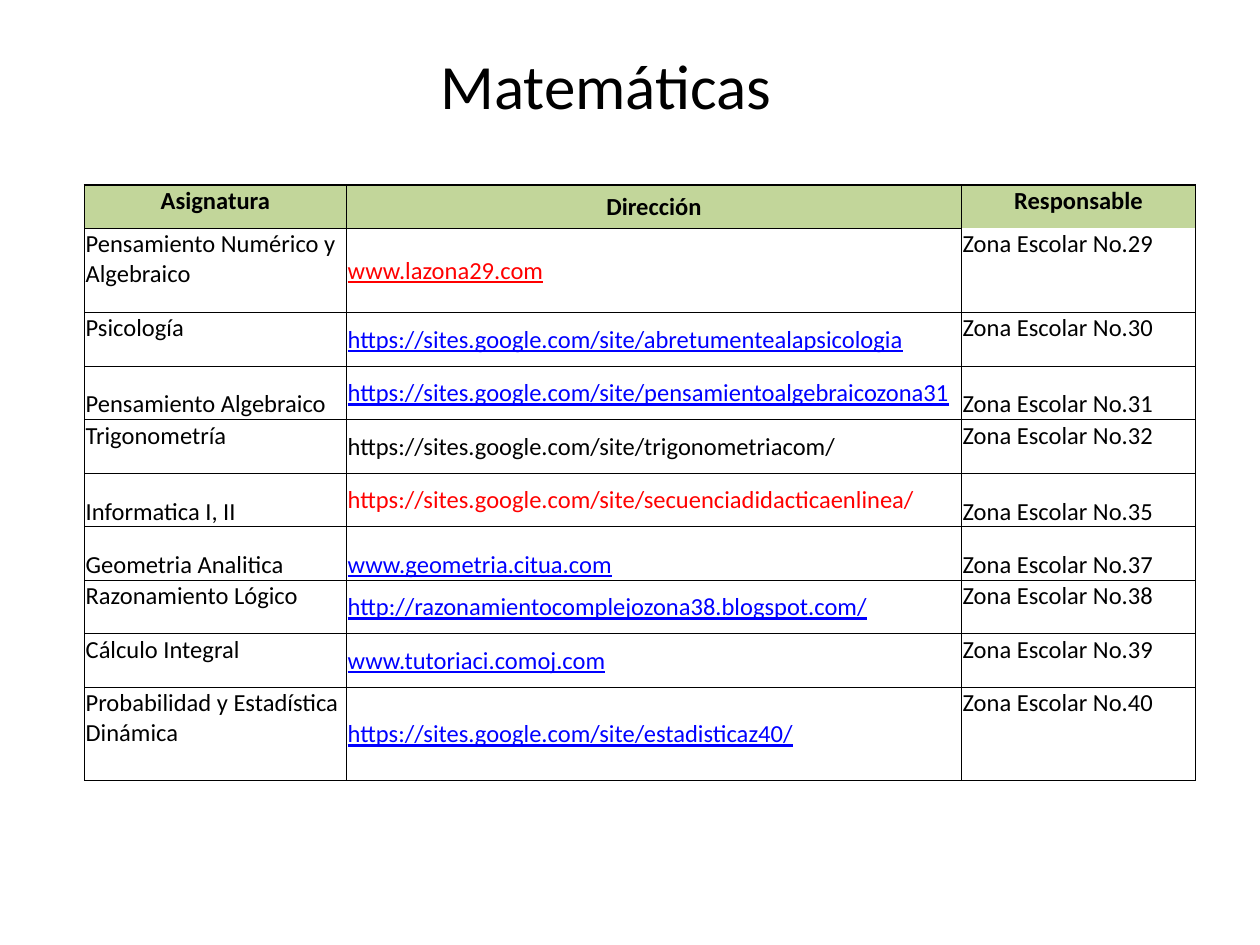
from lxml.etree import SubElement
from pptx import Presentation
from pptx.dml.color import RGBColor
from pptx.enum.text import MSO_ANCHOR as ANCHOR, PP_ALIGN as ALIGN
from pptx.oxml.ns import qn
from pptx.util import Inches, Pt

FONT = "Calibri"
BLACK, RED, BLUE, GREEN = "000000", "FF0000", "0000FF", "C2D69A"
TOP, MIDDLE, BOTTOM = ANCHOR.TOP, ANCHOR.MIDDLE, ANCHOR.BOTTOM

HEADERS = ["Asignatura", "Dirección", "Responsable"]
# subject, address, zone number, address colour, underlined, outer anchor, address anchor
SUBJECTS = [
    ("Pensamiento Numérico y Algebraico", "www.lazona29.com", 29, RED, True, TOP, MIDDLE),
    ("Psicología", "https://sites.google.com/site/abretumentealapsicologia",
     30, BLUE, True, TOP, MIDDLE),
    ("Pensamiento Algebraico", "https://sites.google.com/site/pensamientoalgebraicozona31",
     31, BLUE, True, BOTTOM, MIDDLE),
    ("Trigonometría", "https://sites.google.com/site/trigonometriacom/",
     32, BLACK, False, TOP, MIDDLE),
    ("Informatica I, II", "https://sites.google.com/site/secuenciadidacticaenlinea/",
     35, RED, False, BOTTOM, MIDDLE),
    ("Geometria Analitica", "www.geometria.citua.com", 37, BLUE, True, BOTTOM, BOTTOM),
    ("Razonamiento Lógico", "http://razonamientocomplejozona38.blogspot.com/",
     38, BLUE, True, TOP, MIDDLE),
    ("Cálculo Integral", "www.tutoriaci.comoj.com", 39, BLUE, True, TOP, MIDDLE),
    ("Probabilidad y Estadística Dinámica", "https://sites.google.com/site/estadisticaz40/",
     40, BLUE, True, TOP, MIDDLE),
]
COLUMN_WIDTHS = [2.08, 4.88, 1.86]
HEADER_HEIGHT, TALL_ROW, LAST_ROW = Inches(0.34), Inches(0.67), Inches(0.74)
BODY_ROW = Pt(30.6)


def color(hex_string):
    return RGBColor.from_string(hex_string)


def set_font(paragraph, size, hex_string=BLACK, bold=False, underline=False):
    font = paragraph.font
    font.name, font.size, font.bold, font.underline = FONT, Pt(size), bold, underline
    font.color.rgb = color(hex_string)


def set_borders(cell, widths):
    """Draw the L, R, T and B borders; a width of 0 hides one."""
    properties = cell._tc.get_or_add_tcPr()
    for side, width in zip("LRTB", widths):
        line = SubElement(properties, qn(f"a:ln{side}"), w=str(Pt(width)))
        if width:
            fill = SubElement(line, qn("a:solidFill"))
            SubElement(fill, qn("a:srgbClr"), val=BLACK)
        else:
            SubElement(line, qn("a:noFill"))


def fill_cell(cell, text, anchor, borders, fill=None, align=ALIGN.LEFT, **font):
    set_borders(cell, borders)
    if fill:
        cell.fill.solid()
        cell.fill.fore_color.rgb = color(fill)
    else:
        cell.fill.background()
    cell.margin_left = cell.margin_right = cell.margin_top = Inches(0.01)
    cell.margin_bottom = 0
    cell.vertical_anchor = anchor
    cell.text = text
    paragraph = cell.text_frame.paragraphs[0]
    paragraph.alignment = align
    set_font(paragraph, 14, **font)


def add_title(slide, left, top, width, height):
    frame = slide.shapes.add_textbox(left, top, width, height).text_frame
    frame.word_wrap = True
    frame.margin_top = Inches(0.08)
    paragraph = frame.paragraphs[0]
    paragraph.text = "Matemáticas"
    paragraph.alignment = ALIGN.CENTER
    set_font(paragraph, 36)


def add_subject_table(slide, left, top, width):
    heights = [HEADER_HEIGHT, TALL_ROW, *[BODY_ROW] * (len(SUBJECTS) - 2), LAST_ROW]
    table = slide.shapes.add_table(
        len(heights), len(HEADERS), left, top, width, sum(heights)).table
    table.first_row = table.horz_banding = False
    for column, share in zip(table.columns, COLUMN_WIDTHS):
        column.width = int(width * share / sum(COLUMN_WIDTHS))
    for row, height in zip(table.rows, heights):
        row.height = height

    last = len(HEADERS) - 1
    for index, header in enumerate(HEADERS):
        fill_cell(table.cell(0, index), header, MIDDLE if index == 1 else TOP,
                  (1, 1, 1, 0 if index == last else 0.5), GREEN, ALIGN.CENTER, bold=True)
    for row, (subject, address, zone, hue, underline, outer, inner) in enumerate(SUBJECTS, 1):
        grid = (0.5,) * 4
        zone_borders = (0.5, 0.5, 0, 0.5) if row == 1 else grid
        fill_cell(table.cell(row, 0), subject, outer, grid)
        fill_cell(table.cell(row, 1), address, inner, grid,
                  hex_string=hue, underline=underline)
        fill_cell(table.cell(row, 2), f"Zona Escolar No.{zone}", outer, zone_borders)


def main():
    presentation = Presentation()
    presentation.slide_width, presentation.slide_height = Inches(10), Inches(7.5)
    slide = presentation.slides.add_slide(presentation.slide_layouts[6])
    add_title(slide, Inches(2.8), Inches(0.29), Inches(4.02), Inches(0.85))
    add_subject_table(slide, Inches(0.67), Inches(1.47), Inches(sum(COLUMN_WIDTHS)))
    presentation.save("out.pptx")


if __name__ == "__main__":
    main()
